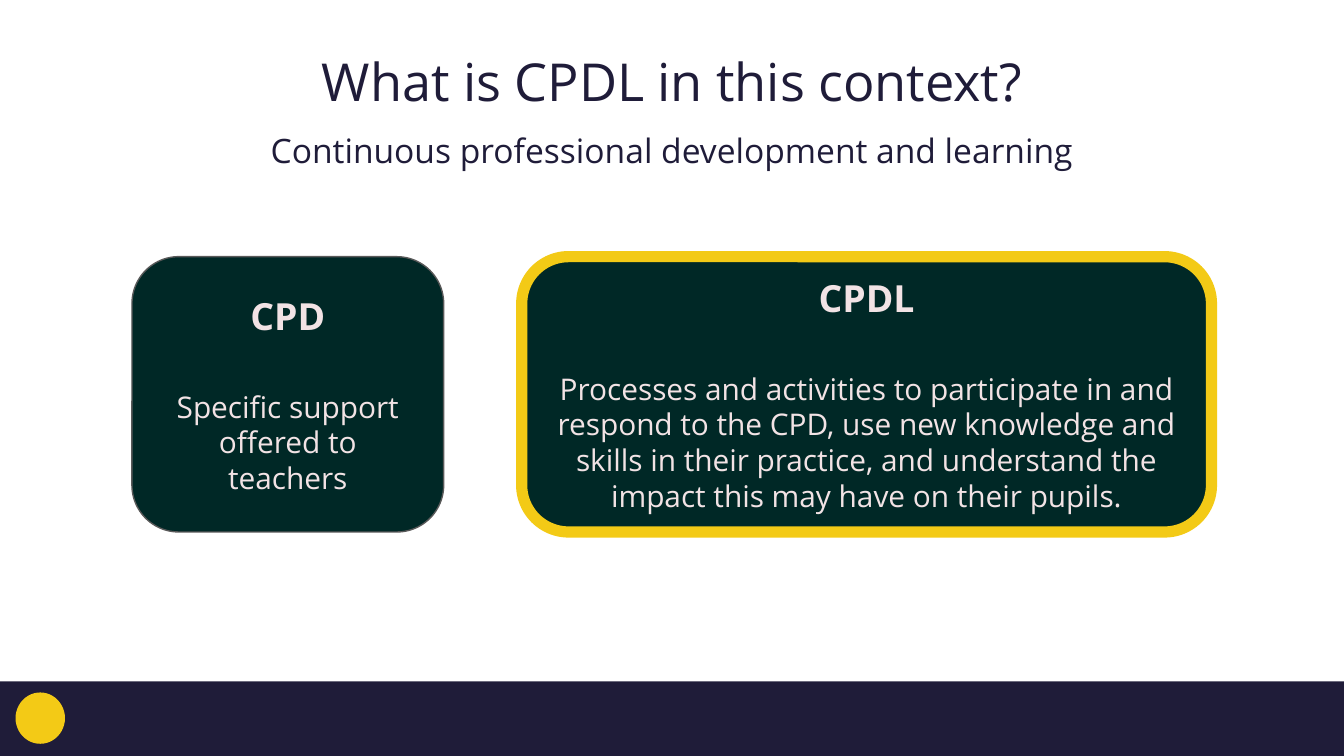
"""Builds a slide that sets CPD beside CPDL."""
from pptx import Presentation
from pptx.dml.color import RGBColor
from pptx.enum.shapes import MSO_SHAPE
from pptx.enum.text import MSO_ANCHOR, MSO_AUTO_SIZE, PP_ALIGN
from pptx.util import Pt

RECTANGLE, OVAL, ROUNDED = MSO_SHAPE.RECTANGLE, MSO_SHAPE.OVAL, MSO_SHAPE.ROUNDED_RECTANGLE
TOP, MIDDLE = MSO_ANCHOR.TOP, MSO_ANCHOR.MIDDLE
GROW, FIXED = MSO_AUTO_SIZE.SHAPE_TO_FIT_TEXT, MSO_AUTO_SIZE.NONE
CENTER = PP_ALIGN.CENTER

COLORS = {"navy": "1F1C39", "yellow": "F3CA16", "green": "002826",
          "grey": "595959", "blush": "F2E3E5"}
FONT = "Open Sans"
WIDTH, HEIGHT = 720, 405
FOOTER_TOP = 365
CARD_TOP, CARD_HEIGHT = 137.5, 147.5

TITLE = "What is CPDL in this context?"
SUBTITLE = "Continuous professional development and learning"
CARDS = [
    {"heading": "CPD", "body": "Specific support offered to teachers",
     "left": 70.7, "width": 167, "line": ("grey", 0.75)},
    {"heading": "CPDL",
     "body": "Processes and activities to participate in and respond to the CPD, "
             "use new knowledge and skills in their practice, and understand the "
             "impact this may have on their pupils.",
     "left": 279.5, "width": 369.5, "line": ("yellow", 6)},
]


def color(name):
    """Return the named colour."""
    return RGBColor.from_string(COLORS[name])


def place(shape, left, top, width, height):
    """Move and size a shape in points."""
    for name, value in zip(("left", "top", "width", "height"), (left, top, width, height)):
        setattr(shape, name, Pt(value))


def write(shape, lines, tint, inset, frame_format):
    """Fill a shape with centred lines of (text, size, bold, paragraph format)."""
    frame = shape.text_frame
    margins = {f"margin_{side}": Pt(inset) for side in ("left", "top", "right", "bottom")}
    for name, value in {"word_wrap": True, **margins, **frame_format}.items():
        setattr(frame, name, value)
    for index, (text, size, bold, para_format) in enumerate(lines):
        para = frame.add_paragraph() if index else frame.paragraphs[0]
        for name, value in {"alignment": CENTER, **para_format}.items():
            setattr(para, name, value)
        span = para.add_run()
        span.text = text
        for name, value in {"name": FONT, "size": Pt(size), "bold": bold}.items():
            setattr(span.font, name, value)
        span.font.color.rgb = color(tint)


def add_shape(slide, kind, bounds, fill, line=None):
    """Add a filled shape with an optional (colour, width) line."""
    shape = slide.shapes.add_shape(kind, *map(Pt, bounds))
    shape.shadow.inherit = False
    shape.fill.solid()
    shape.fill.fore_color.rgb = color(fill)
    if line:
        shape.line.color.rgb = color(line[0])
        shape.line.width = Pt(line[1])
    else:
        shape.line.fill.background()
    return shape


def main():
    """Build and save the deck."""
    deck = Presentation()
    deck.slide_width, deck.slide_height = Pt(WIDTH), Pt(HEIGHT)
    slide = deck.slides.add_slide(deck.slide_layouts[5])

    subtitle = slide.shapes.add_textbox(0, 0, 0, 0)
    headers = [(slide.shapes.title, TITLE, 28, 23, 451.5, 34),
               (subtitle, SUBTITLE, 18, 67.5, 548.5, 22)]
    for box, text, size, top, width, height in headers:
        place(box, (WIDTH - width) / 2, top, width, height)
        write(box, [(text, size, False, {"line_spacing": 1.1})], "navy", 0,
              {"vertical_anchor": TOP, "auto_size": GROW})

    add_shape(slide, RECTANGLE, (0, FOOTER_TOP, WIDTH, HEIGHT - FOOTER_TOP), "navy")
    add_shape(slide, OVAL, (8.3, 371, 26.5, 27.5), "yellow")

    for card in CARDS:
        bounds = (card["left"], CARD_TOP, card["width"], CARD_HEIGHT)
        box = add_shape(slide, ROUNDED, bounds, "green", card["line"])
        box.adjustments[0] = 0.17
        lines = [(card["heading"], 20, True, {}),
                 (card["body"], 16, False, {"space_before": Pt(27)})]
        write(box, lines, "blush", 7.2, {"vertical_anchor": MIDDLE, "auto_size": FIXED})

    deck.save("out.pptx")


if __name__ == "__main__":
    main()
